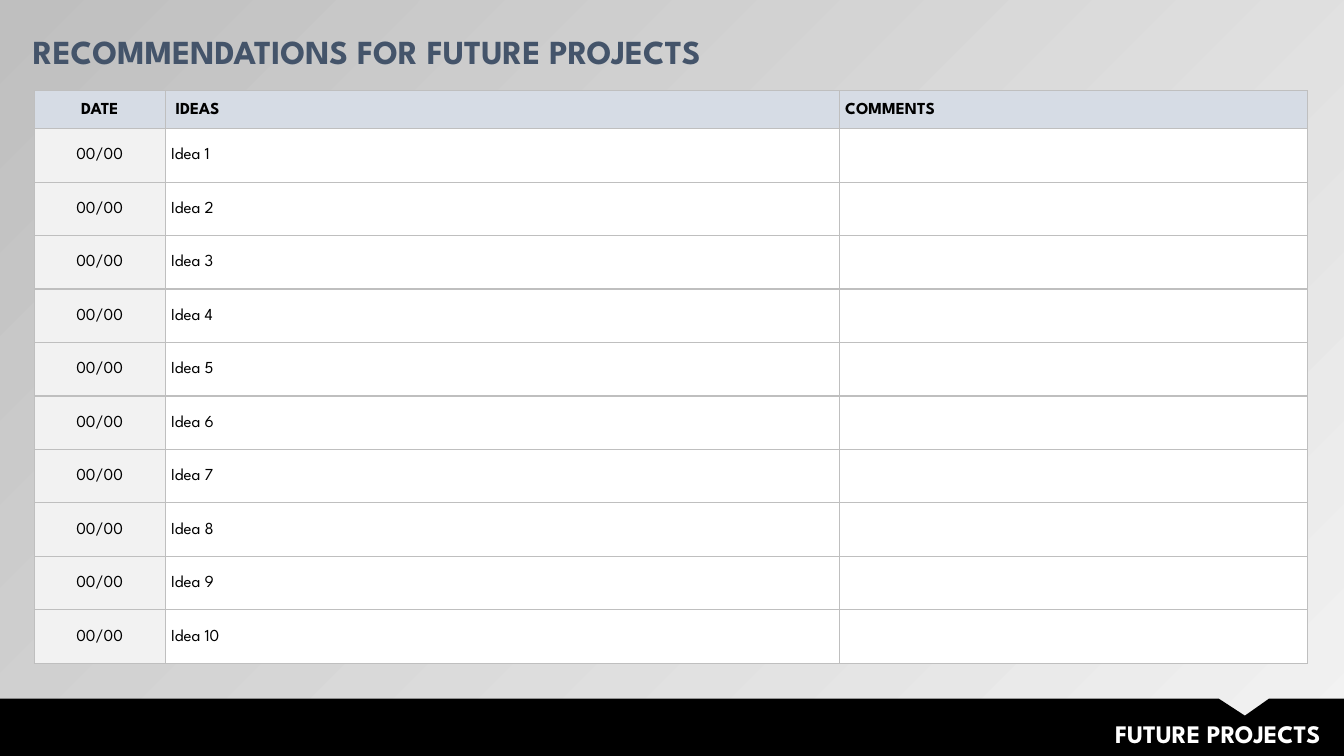
from dataclasses import dataclass

from lxml import etree
from pptx import Presentation
from pptx.dml.color import RGBColor
from pptx.enum.text import MSO_ANCHOR, MSO_AUTO_SIZE, PP_ALIGN
from pptx.oxml.ns import qn
from pptx.slide import Slide
from pptx.table import _Cell
from pptx.text.text import TextFrame
from pptx.util import Pt

LEFT, CENTER, RIGHT = PP_ALIGN.LEFT, PP_ALIGN.CENTER, PP_ALIGN.RIGHT
MIDDLE = MSO_ANCHOR.MIDDLE
GROW = MSO_AUTO_SIZE.SHAPE_TO_FIT_TEXT


@dataclass(frozen=True)
class Theme:
    font: str = "League Spartan"
    title_size: float = 24
    footer_size: float = 18
    table_size: float = 12
    title: str = "44546A"
    ink: str = "000000"
    paper: str = "FFFFFF"
    header: str = "D6DCE5"
    date: str = "F2F2F2"
    border: str = "BFBFBF"
    light: str = "F2F2F2"
    dark: str = "BFBFBF"


@dataclass(frozen=True)
class TextStyle:
    size: float
    color: str
    bold: bool = True
    alignment: PP_ALIGN = LEFT
    line_spacing: float = 1.0
    space_before: float = 0


@dataclass(frozen=True)
class Label:
    text: str
    left: float
    top: float
    width: float
    height: float
    margin_x: float
    margin_y: float
    style: TextStyle


@dataclass(frozen=True)
class Column:
    heading: str
    width: float
    entry: str
    fill: str
    alignment: PP_ALIGN = LEFT


THEME = Theme()
SLIDE_WIDTH, SLIDE_HEIGHT = 960, 540
BAND_TOP = 499
NOTCH = ((870.5, BAND_TOP), (889.2, 511.2), (906.5, BAND_TOP))
TABLE_LEFT, TABLE_TOP = 24.5, 64.9
HEADER_HEIGHT, ROW_HEIGHT = 27, 38.2
IDEA_COUNT = 10
COLUMNS = (
    Column("DATE", 93.5, "00/00", THEME.date, CENTER),
    Column(" IDEAS", 481.5, "Idea {number}", THEME.paper),
    Column("COMMENTS", 334.5, "", THEME.paper),
)
FOOTER = Label("FUTURE PROJECTS", 298, 509.8, 652.3, 28.8, 7.2, 3.6,
               TextStyle(THEME.footer_size, THEME.paper, alignment=RIGHT))
TITLE = Label("RECOMMENDATIONS FOR FUTURE PROJECTS", 15, 12.2, 549.4, 41, 8.6, 4.3,
              TextStyle(THEME.title_size, THEME.title, line_spacing=1.2, space_before=4.8))


def set_attributes(target: object, values: dict[str, object]) -> None:
    for name, value in values.items():
        setattr(target, name, value)


def write_text(frame: TextFrame, text: str, style: TextStyle) -> None:
    paragraph = frame.paragraphs[0]
    paragraph.text = text
    set_attributes(paragraph, {
        "alignment": style.alignment,
        "line_spacing": style.line_spacing,
        "space_before": Pt(style.space_before),
    })
    set_attributes(paragraph.font, {
        "name": THEME.font, "size": Pt(style.size), "bold": style.bold,
    })
    paragraph.font.color.rgb = RGBColor.from_string(style.color)
    for run in paragraph.runs:
        set_attributes(run.font, {
            "name": THEME.font, "size": Pt(style.size), "bold": style.bold,
        })
        run.font.color.rgb = RGBColor.from_string(style.color)


def paint_background(slide: Slide) -> None:
    """Run a gradient from a translucent lower right to a dark upper left."""
    fill = slide.background.fill
    fill.gradient()
    fill.gradient_angle = 135
    for stop, color in zip(fill.gradient_stops, (THEME.light, THEME.dark)):
        stop.color.rgb = RGBColor.from_string(color)
    first_color = next(slide.element.iter(qn("a:srgbClr")))
    etree.SubElement(first_color, qn("a:alpha"), val="40000")


def add_footer_band(slide: Slide) -> None:
    outline = ((0, BAND_TOP), *NOTCH, (SLIDE_WIDTH, BAND_TOP),
               (SLIDE_WIDTH, SLIDE_HEIGHT), (0, SLIDE_HEIGHT))
    start, *rest = [(Pt(x), Pt(y)) for x, y in outline]
    builder = slide.shapes.build_freeform(*start)
    builder.add_line_segments(rest, close=True)
    band = builder.convert_to_shape()
    band.shadow.inherit = False
    band.fill.solid()
    band.fill.fore_color.rgb = RGBColor.from_string(THEME.ink)
    band.line.fill.background()


def add_label(slide: Slide, label: Label) -> None:
    box = slide.shapes.add_textbox(
        Pt(label.left), Pt(label.top), Pt(label.width), Pt(label.height))
    set_attributes(box.text_frame, {
        "word_wrap": True, "auto_size": GROW,
        "margin_left": Pt(label.margin_x), "margin_right": Pt(label.margin_x),
        "margin_top": Pt(label.margin_y), "margin_bottom": Pt(label.margin_y),
    })
    write_text(box.text_frame, label.text, label.style)


def add_borders(cell: _Cell) -> None:
    properties = cell._tc.get_or_add_tcPr()
    for index, side in enumerate(("a:lnL", "a:lnR", "a:lnT", "a:lnB")):
        line = etree.Element(qn(side), w=str(Pt(1)))
        fill = etree.SubElement(line, qn("a:solidFill"))
        etree.SubElement(fill, qn("a:srgbClr"), val=THEME.border)
        properties.insert(index, line)


def fill_cell(cell: _Cell, text: str, color: str, style: TextStyle) -> None:
    set_attributes(cell, {
        "vertical_anchor": MIDDLE,
        "margin_left": Pt(4.3), "margin_right": Pt(4.3),
        "margin_top": 0, "margin_bottom": 0,
    })
    cell.fill.solid()
    cell.fill.fore_color.rgb = RGBColor.from_string(color)
    add_borders(cell)
    write_text(cell.text_frame, text, style)


def add_ideas_table(slide: Slide) -> None:
    width = sum(column.width for column in COLUMNS)
    height = HEADER_HEIGHT + IDEA_COUNT * ROW_HEIGHT
    table = slide.shapes.add_table(
        IDEA_COUNT + 1, len(COLUMNS),
        Pt(TABLE_LEFT), Pt(TABLE_TOP), Pt(width), Pt(height)).table
    set_attributes(table, {"first_row": False, "horz_banding": False})
    for number, row in enumerate(table.rows):
        is_header = number == 0
        row.height = Pt(HEADER_HEIGHT if is_header else ROW_HEIGHT)
        for column, cell in zip(COLUMNS, row.cells):
            text = column.heading if is_header else column.entry.format(number=number)
            color = THEME.header if is_header else column.fill
            style = TextStyle(THEME.table_size, THEME.ink, is_header,
                              column.alignment, line_spacing=1.07)
            fill_cell(cell, text, color, style)
    for column, table_column in zip(COLUMNS, table.columns):
        table_column.width = Pt(column.width)


def main() -> None:
    presentation = Presentation()
    set_attributes(presentation, {
        "slide_width": Pt(SLIDE_WIDTH), "slide_height": Pt(SLIDE_HEIGHT),
    })
    slide = presentation.slides.add_slide(presentation.slide_layouts[6])
    paint_background(slide)
    add_footer_band(slide)
    add_label(slide, FOOTER)
    add_ideas_table(slide)
    add_label(slide, TITLE)
    presentation.save("out.pptx")


if __name__ == "__main__":
    main()
